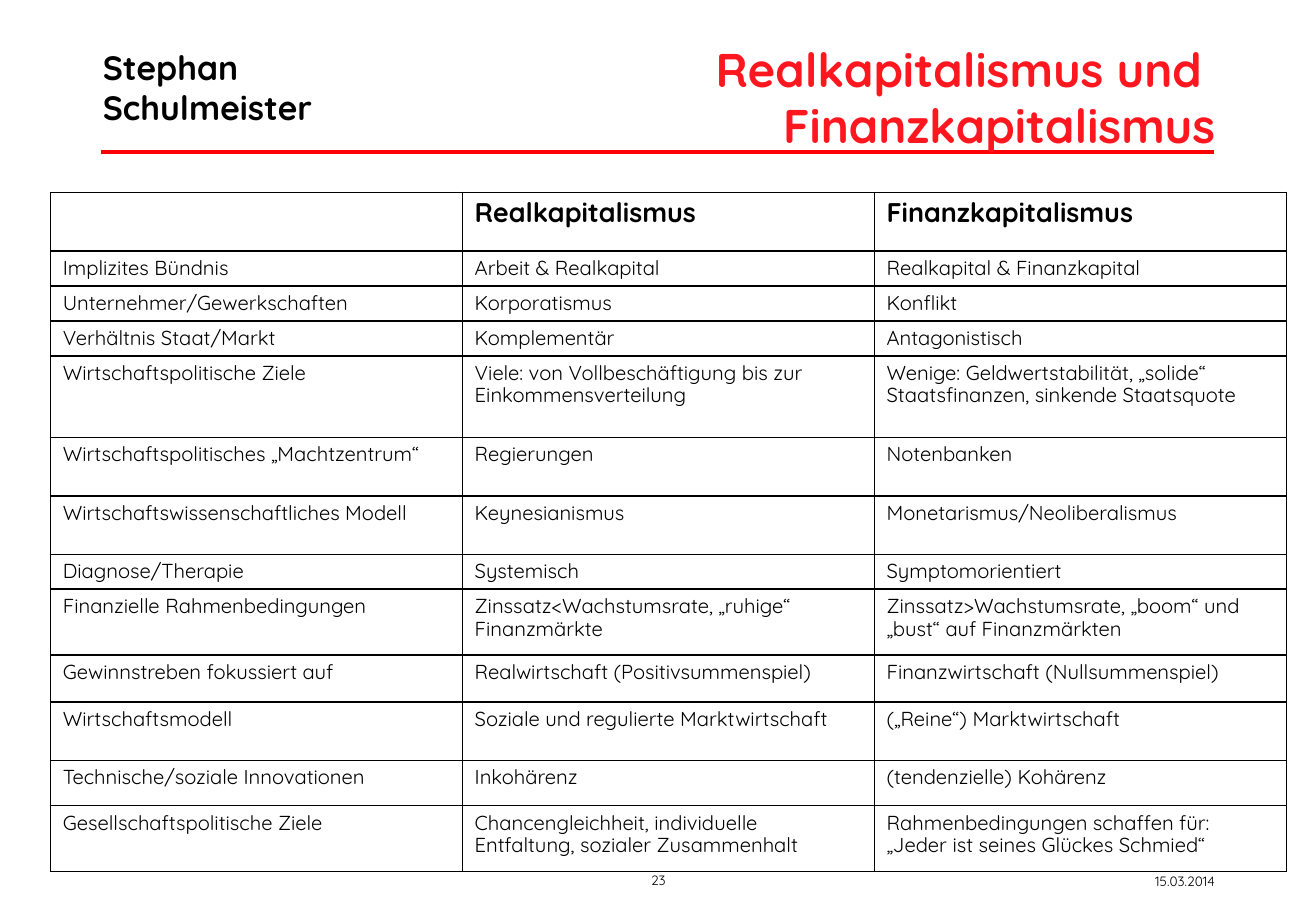
"""Build the slide comparing Realkapitalismus and Finanzkapitalismus."""
from dataclasses import dataclass

from lxml import etree
from pptx import Presentation
from pptx import util as u
from pptx.dml.color import RGBColor
from pptx.enum import shapes, text
from pptx.oxml import parse_xml
from pptx.oxml.ns import nsdecls, qn
from pptx.slide import Slide
from pptx.table import _Cell
from pptx.text.text import TextFrame


@dataclass(frozen=True)
class Theme:
    font: str = "Quicksand"
    black: str = "000000"
    title_red: str = "FF1720"
    rule_red: str = "FF0000"
    title_size: float = 28
    author_size: float = 20
    head_size: float = 16
    body_size: float = 12
    footer_size: float = 8
    rule_width: float = 2.25
    border_width: float = 1


THEME = Theme()


@dataclass(frozen=True)
class Style:
    size: float
    color: str = THEME.black
    bold: bool = False
    align: text.PP_ALIGN = text.PP_ALIGN.LEFT
    spacing: float = 1.0


@dataclass(frozen=True)
class Label:
    words: str
    left: float
    top: float
    width: float
    height: float
    style: Style
    anchor: text.MSO_ANCHOR = text.MSO_ANCHOR.TOP
    inset: tuple[float, float] = (0.25, 0.13)


@dataclass(frozen=True)
class Row:
    height: float
    aspect: str
    real: str
    finance: str


LABELS = [
    Label("23", 12.98, 18.24, 1.57, 0.33,
          Style(THEME.footer_size, align=text.PP_ALIGN.CENTER), inset=(0, 0)),
    Label("15.03.2014", 23.57, 18.14, 2.08, 0.58,
          Style(THEME.footer_size, align=text.PP_ALIGN.RIGHT), text.MSO_ANCHOR.MIDDLE),
    Label("Stephan Schulmeister", 1.9, 0.84, 5.08, 1.96,
          Style(THEME.author_size, bold=True)),
    Label("Realkapitalismus und \vFinanzkapitalismus", 6.98, 0.43, 18.67, 3.18,
          Style(THEME.title_size, THEME.title_red, True, text.PP_ALIGN.RIGHT),
          text.MSO_ANCHOR.MIDDLE),
]

HEAD = Style(THEME.head_size, bold=True, spacing=0.9)
BODY = Style(THEME.body_size, spacing=0.9)
COLUMN_WIDTH = 8.61

ROWS = [
    Row(1.23, "", "Realkapitalismus", "Finanzkapitalismus"),
    Row(0.73, "Implizites Bündnis", "Arbeit & Realkapital", "Realkapital & Finanzkapital"),
    Row(0.73, "Unternehmer/Gewerkschaften", "Korporatismus", "Konflikt"),
    Row(0.73, "Verhältnis Staat/Markt", "Komplementär", "Antagonistisch"),
    Row(1.71, "Wirtschaftspolitische Ziele",
        "Viele: von Vollbeschäftigung bis zur Einkommensverteilung",
        "Wenige: Geldwertstabilität, „solide“ Staatsfinanzen, sinkende Staatsquote"),
    Row(1.22, "Wirtschaftspolitisches „Machtzentrum“", "Regierungen", "Notenbanken"),
    Row(1.22, "Wirtschaftswissenschaftliches Modell", "Keynesianismus",
        "Monetarismus/Neoliberalismus"),
    Row(0.73, "Diagnose/Therapie", "Systemisch", "Symptomorientiert"),
    Row(1.38, "Finanzielle Rahmenbedingungen",
        "Zinssatz<Wachstumsrate, „ruhige“ Finanzmärkte",
        "Zinssatz>Wachstumsrate, „boom“ und „bust“ auf Finanzmärkten"),
    Row(0.98, "Gewinnstreben fokussiert auf", "Realwirtschaft (Positivsummenspiel)",
        "Finanzwirtschaft (Nullsummenspiel)"),
    Row(1.22, "Wirtschaftsmodell", "Soziale und regulierte Marktwirtschaft",
        "(„Reine“) Marktwirtschaft"),
    Row(0.95, "Technische/soziale Innovationen", "Inkohärenz", "(tendenzielle) Kohärenz"),
    Row(1.38, "Gesellschaftspolitische Ziele",
        "Chancengleichheit, individuelle Entfaltung, sozialer Zusammenhalt",
        "Rahmenbedingungen schaffen für: „Jeder ist seines Glückes Schmied“"),
]


def write(frame: TextFrame, words: str, style: Style) -> None:
    para = frame.paragraphs[0]
    para.text = words
    para.alignment = style.align
    para.line_spacing = style.spacing
    formats = {"name": THEME.font, "size": u.Pt(style.size), "bold": style.bold}
    for span in para.runs:
        for name, value in formats.items():
            setattr(span.font, name, value)
        span.font.color.rgb = RGBColor.from_string(style.color)


def add_label(page: Slide, label: Label) -> None:
    box = page.shapes.add_textbox(
        u.Cm(label.left), u.Cm(label.top), u.Cm(label.width), u.Cm(label.height))
    side, edge = (u.Cm(length) for length in label.inset)
    formats = {"word_wrap": True, "vertical_anchor": label.anchor,
               "margin_left": side, "margin_right": side,
               "margin_top": edge, "margin_bottom": edge}
    for name, value in formats.items():
        setattr(box.text_frame, name, value)
    write(box.text_frame, label.words, label.style)


def add_rule(page: Slide) -> None:
    rule = page.shapes.add_connector(
        shapes.MSO_CONNECTOR.STRAIGHT, u.Cm(2.11), u.Cm(3.18), u.Cm(25.37), u.Cm(3.18))
    rule.line.color.rgb = RGBColor.from_string(THEME.rule_red)
    rule.line.width = u.Pt(THEME.rule_width)
    etree.SubElement(rule._element.spPr, qn("a:effectLst"))


def add_borders(cell: _Cell) -> None:
    properties = cell._tc.get_or_add_tcPr()
    for place, side in enumerate("LRTB"):
        properties.insert(place, parse_xml(
            f'<a:ln{side} {nsdecls("a")} w="{u.Pt(THEME.border_width)}"><a:solidFill>'
            f'<a:srgbClr val="{THEME.black}"/></a:solidFill></a:ln{side}>'))


def add_comparison(page: Slide) -> None:
    table = page.shapes.add_table(
        len(ROWS), 3, u.Cm(1.06), u.Cm(4.02), u.Cm(3 * COLUMN_WIDTH),
        u.Cm(sum(row.height for row in ROWS))).table
    table.first_row = table.horz_banding = False
    for column in table.columns:
        column.width = u.Cm(COLUMN_WIDTH)
    for index, row in enumerate(ROWS):
        table.rows[index].height = u.Cm(row.height)
        for cell, words in zip(table.rows[index].cells, (row.aspect, row.real, row.finance)):
            cell.fill.background()
            add_borders(cell)
            if words:
                write(cell.text_frame, words, BODY if index else HEAD)


def main() -> None:
    deck = Presentation()
    deck.slide_width, deck.slide_height = u.Cm(27.51), u.Cm(19.05)
    page = deck.slides.add_slide(deck.slide_layouts[6])
    add_rule(page)
    for label in LABELS:
        add_label(page, label)
    add_comparison(page)
    deck.save("out.pptx")


if __name__ == "__main__":
    main()
